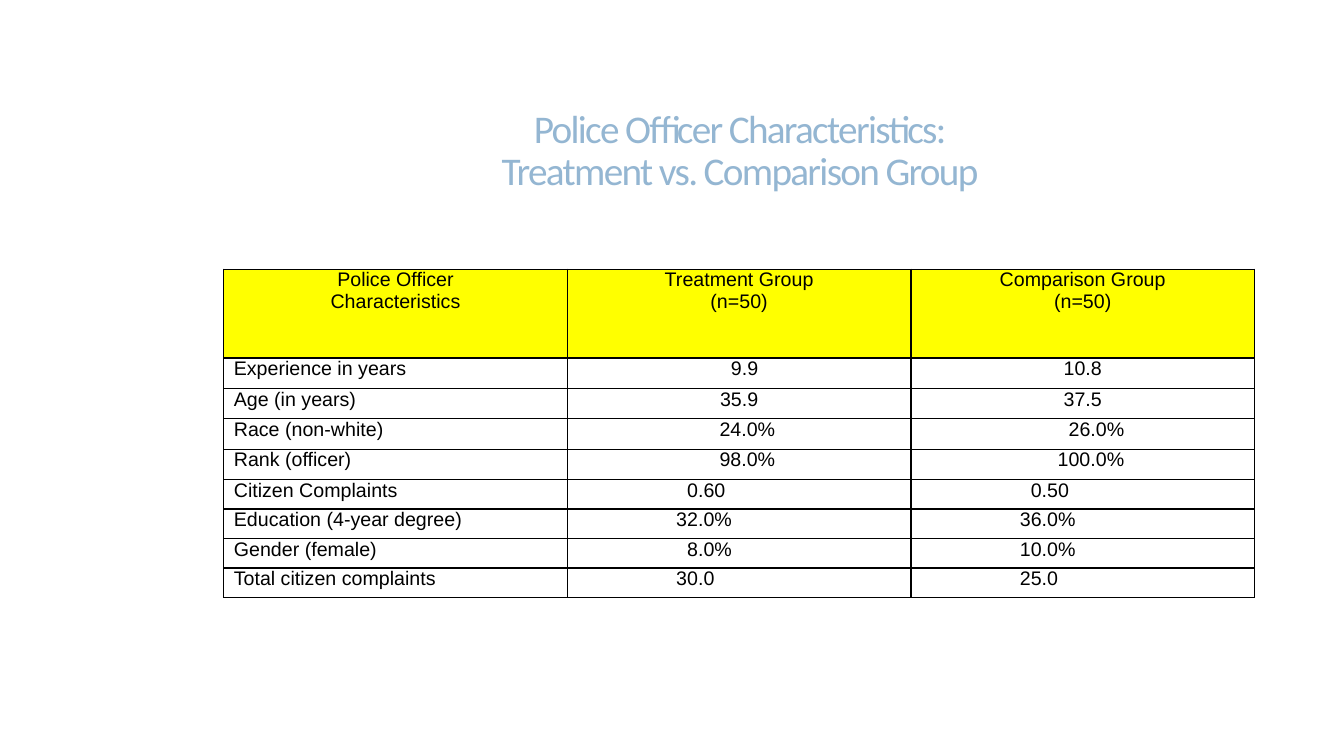
from dataclasses import dataclass

from lxml.etree import SubElement
from pptx import Presentation
from pptx.dml.color import RGBColor
from pptx.enum.text import MSO_ANCHOR, PP_ALIGN
from pptx.oxml import parse_xml
from pptx.oxml.ns import nsdecls
from pptx.util import Inches, Length, Pt


@dataclass(frozen=True)
class Theme:
    title_color: str = "94B6D2"
    text_color: str = "000000"
    header_fill: str = "FFFF00"
    border_color: str = "000000"
    title_font: str = "Calibri"
    table_font: str = "Arial"
    title_size: float = 28
    table_size: float = 14
    border_width: float = 1


@dataclass(frozen=True)
class Entry:
    """A cell's lines, with an indent counted in steps."""
    text: str
    steps: int = 0
    centered: bool = True


@dataclass(frozen=True)
class Row:
    height: float
    entries: tuple[Entry, ...]
    fill: str | None = None


THEME = Theme()
SLIDE_WIDTH, SLIDE_HEIGHT = Inches(13.33), Inches(7.5)
INDENT_STEP = Pt(THEME.table_size * 0.28)
HEADER_HEIGHT, TALL, SHORT = 11.76, 4.02, 3.91


def across(percent: float) -> Length:
    return Length(round(SLIDE_WIDTH * percent / 100))


def down(percent: float) -> Length:
    return Length(round(SLIDE_HEIGHT * percent / 100))


def centered_row(label: str, treatment: Entry, comparison: Entry) -> Row:
    return Row(TALL, (Entry(label, centered=False), treatment, comparison))


def indented_row(label: str, treatment: str, comparison: str) -> Row:
    # Values under ten sit one digit (two steps) further right
    values = [Entry(value, 20 if value.index(".") == 1 else 18, False)
              for value in (treatment, comparison)]
    return Row(SHORT, (Entry(label, centered=False), *values))


ROWS = (
    Row(HEADER_HEIGHT, (Entry("Police Officer\nCharacteristics"),
                        Entry("Treatment Group\n(n=50)"),
                        Entry("Comparison Group\n(n=50)")), THEME.header_fill),
    centered_row("Experience in years", Entry("9.9", 2), Entry("10.8")),
    centered_row("Age (in years)", Entry("35.9"), Entry("37.5")),
    centered_row("Race (non-white)", Entry("24.0%", 3), Entry("26.0%", 5)),
    centered_row("Rank (officer)", Entry("98.0%", 3), Entry("100.0%", 3)),
    indented_row("Citizen Complaints", "0.60", "0.50"),
    indented_row("Education (4-year degree)", "32.0%", "36.0%"),
    indented_row("Gender (female)", "8.0%", "10.0%"),
    indented_row("Total citizen complaints", "30.0", "25.0"),
)


def write_text(frame, text: str, *, font: str, size: float, color: str,
               centered: bool = True, indent: int = 0,
               line_spacing: float | None = None,
               tracking: float | None = None) -> None:
    """Write one paragraph per line; a vertical tab breaks within one."""
    frame.text = text
    for para in frame.paragraphs:
        para.alignment = PP_ALIGN.CENTER if centered else PP_ALIGN.LEFT
        if line_spacing:
            para.line_spacing = line_spacing
        if indent:
            properties = para._p.get_or_add_pPr()
            properties.set("marL", str(indent))
            properties.set("indent", "0")
        for span in para.runs:
            span.font.name = font
            span.font.size = Pt(size)
            span.font.color.rgb = RGBColor.from_string(color)
            if tracking:
                span._r.get_or_add_rPr().set("spc", str(round(tracking * 100)))


def add_borders(cell, color: str, width: float) -> None:
    properties = cell._tc.get_or_add_tcPr()
    for position, side in enumerate(("lnL", "lnR", "lnT", "lnB")):
        line = parse_xml(f'<a:{side} {nsdecls("a")} w="{Pt(width)}"/>')
        fill = SubElement(line, line.tag.replace(side, "solidFill"))
        SubElement(fill, line.tag.replace(side, "srgbClr"), val=color)
        properties.insert(position, line)


def draw_cell(cell, entry: Entry, fill: str | None) -> None:
    cell.margin_left = cell.margin_right = Inches(0.1)
    cell.margin_top = cell.margin_bottom = 0
    write_text(cell.text_frame, entry.text, font=THEME.table_font,
               size=THEME.table_size, color=THEME.text_color,
               centered=entry.centered, indent=entry.steps * INDENT_STEP)
    if fill:
        cell.fill.solid()
        cell.fill.fore_color.rgb = RGBColor.from_string(fill)
    else:
        cell.fill.background()
    add_borders(cell, THEME.border_color, THEME.border_width)


def draw_title(page) -> None:
    box = page.shapes.add_textbox(across(11.7), down(12.27), across(86.72), down(15.6))
    frame = box.text_frame
    frame.word_wrap = True
    frame.vertical_anchor = MSO_ANCHOR.MIDDLE
    write_text(frame, "Police Officer Characteristics:\vTreatment vs. Comparison Group",
               font=THEME.title_font, size=THEME.title_size,
               color=THEME.title_color, line_spacing=0.9, tracking=-1.2)


def draw_table(page) -> None:
    height = down(sum(row.height for row in ROWS))
    table = page.shapes.add_table(len(ROWS), len(ROWS[0].entries), across(16.65),
                                  down(35.6), across(76.7), height).table
    table.first_row = table.horz_banding = False
    for row_index, row in enumerate(ROWS):
        table.rows[row_index].height = down(row.height)
        for column_index, entry in enumerate(row.entries):
            draw_cell(table.cell(row_index, column_index), entry, row.fill)


def main() -> None:
    deck = Presentation()
    deck.slide_width, deck.slide_height = SLIDE_WIDTH, SLIDE_HEIGHT
    page = deck.slides.add_slide(deck.slide_layouts[6])
    draw_title(page)
    draw_table(page)
    deck.save("out.pptx")


if __name__ == "__main__":
    main()
